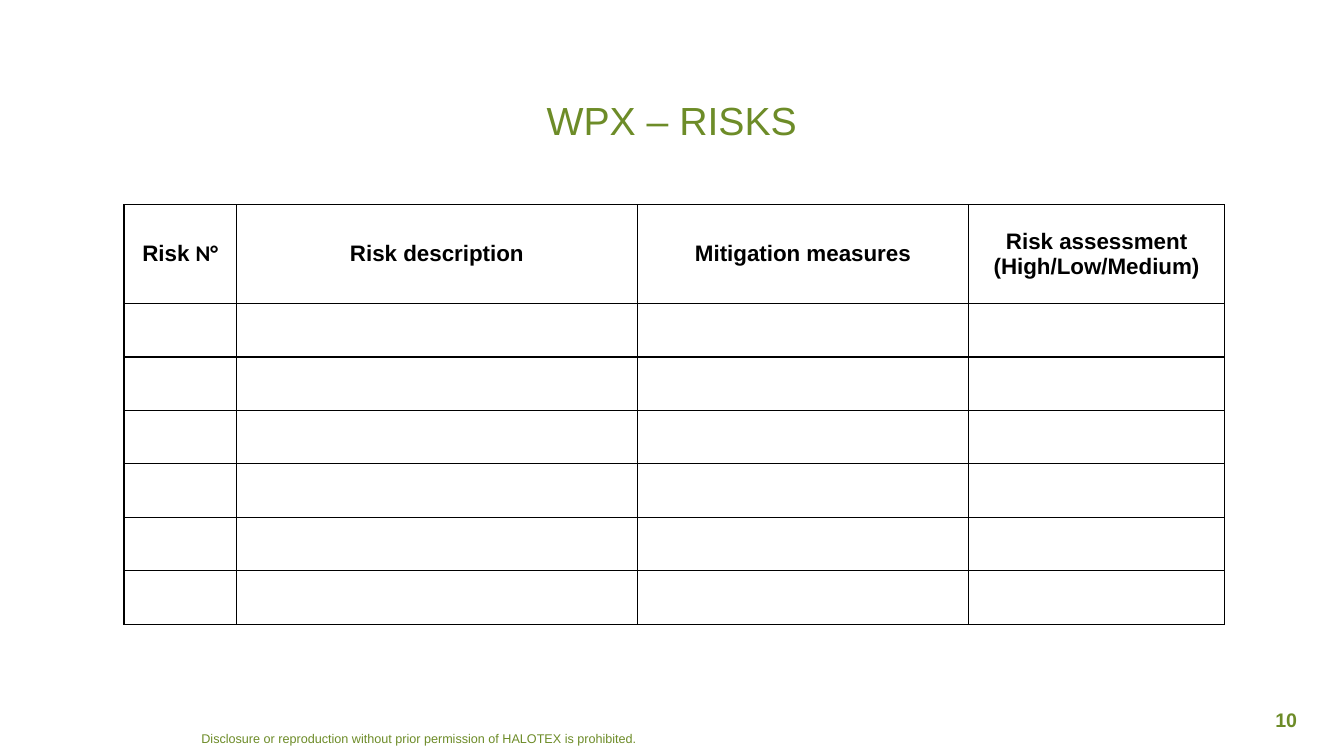
from dataclasses import dataclass

from lxml import etree
from pptx import Presentation
from pptx import util as u
from pptx.dml.color import RGBColor
from pptx.enum import text
from pptx.oxml import ns

COLORS = {"green": "6D8C28", "black": "000000"}
BODY_ROWS = 6
HEADER_HEIGHT, BODY_HEIGHT = 70.6, 38.2


@dataclass
class Label:
    words: str
    left: float
    top: float
    width: float
    height: float
    size: float
    bold: bool = False
    align: text.PP_ALIGN = text.PP_ALIGN.CENTER
    line_spacing: float = 1.0


@dataclass
class Column:
    width: float
    heading: list[list[tuple[str, str]]]  # paragraphs of (words, font name)


LABELS = [
    Label("WPX – RISKS", 69.8, 69.1, 820, 49.7, 28, line_spacing=0.9),
    Label("Disclosure or reproduction without prior permission of HALOTEX is prohibited.",
          136.8, 518.4, 372.2, 28.8, 9, align=text.PP_ALIGN.LEFT),
    Label("10", 891.4, 501.8, 54.7, 28.8, 14, bold=True),
]
COLUMNS = [
    Column(80.2, [[("Risk ", "Arial"), ("N°", "Calibri")]]),
    Column(286.5, [[("Risk description", "Arial")]]),
    Column(236.6, [[("Mitigation measures", "Arial")]]),
    Column(182.9, [[("Risk assessment", "Arial")], [("(High/Low/Medium)", "Arial")]]),
]


def add_span(para, words: str, *, size: float, color: str,
             font: str = "Arial", bold: bool = False) -> None:
    span = para.add_run()
    span.text = words
    span.font.name = font
    span.font.size = u.Pt(size)
    span.font.bold = bold
    span.font.color.rgb = RGBColor.from_string(COLORS[color])


def add_label(page, label: Label) -> None:
    box = page.shapes.add_textbox(u.Pt(label.left), u.Pt(label.top),
                                  u.Pt(label.width), u.Pt(label.height))
    box.text_frame.word_wrap = True
    para = box.text_frame.paragraphs[0]
    para.alignment = label.align
    para.line_spacing = label.line_spacing
    add_span(para, label.words, size=label.size, color="green", bold=label.bold)


def add_borders(cell, color: str, width: float) -> None:
    """Put the four side lines ahead of the fill, as the schema requires."""
    properties = cell._tc.get_or_add_tcPr()
    for index, side in enumerate(("lnL", "lnR", "lnT", "lnB")):
        line = etree.Element(ns.qn(f"a:{side}"), w=str(u.Pt(width)))
        fill = etree.SubElement(line, ns.qn("a:solidFill"))
        etree.SubElement(fill, ns.qn("a:srgbClr"), val=COLORS[color])
        properties.insert(index, line)


def fill_heading(cell, column: Column) -> None:
    cell.vertical_anchor = text.MSO_ANCHOR.MIDDLE
    cell.margin_left = cell.margin_right = u.Pt(0.7)
    cell.margin_top = cell.margin_bottom = u.Pt(0.7)
    frame = cell.text_frame
    for index, spans in enumerate(column.heading):
        para = frame.add_paragraph() if index else frame.paragraphs[0]
        para.alignment = text.PP_ALIGN.CENTER
        for words, font in spans:
            add_span(para, words, size=16, color="black", font=font, bold=True)


def add_risk_table(page, left: float, top: float) -> None:
    heights = [HEADER_HEIGHT] + [BODY_HEIGHT] * BODY_ROWS
    width = sum(column.width for column in COLUMNS)
    table = page.shapes.add_table(len(heights), len(COLUMNS), u.Pt(left), u.Pt(top),
                                  u.Pt(width), u.Pt(sum(heights))).table
    table.first_row = table.horz_banding = False
    for row, height in zip(table.rows, heights):
        row.height = u.Pt(height)
    for index, column in enumerate(COLUMNS):
        table.columns[index].width = u.Pt(column.width)
        fill_heading(table.cell(0, index), column)
    for cell in table.iter_cells():
        cell.fill.background()
        add_borders(cell, "black", 1)


def main() -> None:
    deck = Presentation()
    deck.slide_width, deck.slide_height = u.Pt(960), u.Pt(540)
    page = deck.slides.add_slide(deck.slide_layouts[6])
    add_risk_table(page, 88.6, 146.2)
    for label in LABELS:
        add_label(page, label)
    deck.save("out.pptx")


if __name__ == "__main__":
    main()
